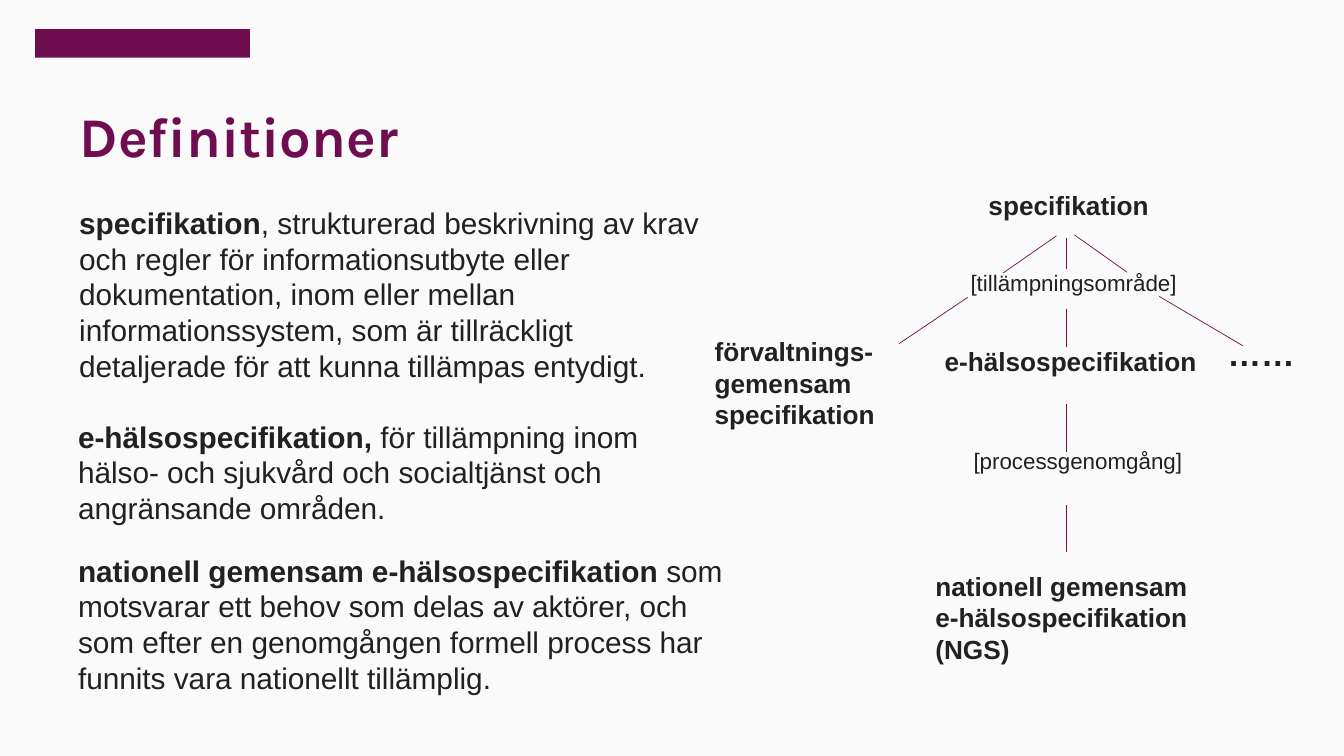
import pptx
import pptx.dml.color
import pptx.enum.shapes
import pptx.enum.text
import pptx.oxml
import pptx.util

Pt = pptx.util.Pt

PLUM = "6E0E50"
INK = "212121"
PAPER = "FAFAFA"

BODY = {"name": "Arial", "size": Pt(21.3)}
TERM = {"name": "Arial", "size": Pt(18.7), "bold": True}
CONDITION = {"name": "Arial", "size": Pt(16)}
ELLIPSIS = {"name": "Arial", "size": Pt(24), "bold": True}
TITLE = {"name": "Karla", "size": Pt(40), "bold": True}

# left, top, width, height, defined term, explanation
DEFINITIONS = [
    (49.5, 142.5, 457, 137, "specifikation",
     ", strukturerad beskrivning av krav och regler för informationsutbyte "
     "eller dokumentation, inom eller mellan informationssystem, som är "
     "tillräckligt detaljerade för att kunna tillämpas entydigt."),
    (48.7, 295.2, 454, 85, "e-hälsospecifikation,",
     " för tillämpning inom hälso- och sjukvård och socialtjänst och "
     "angränsande områden."),
    (48.7, 391, 477, 111, "nationell gemensam e-hälsospecifikation",
     " som motsvarar ett behov som delas av aktörer, och som efter en "
     "genomgången formell process har funnits vara nationellt tillämplig."),
]

# left, top, width, height, text, format
TREE_LABELS = [
    (699, 131.6, 155, 30, "specifikation", TERM),
    (686.2, 188.6, 163.4, 26.6, "[tillämpningsområde]", CONDITION),
    (503.4, 236.2, 129.6, 75, "förvaltnings-\ngemensam\nspecifikation", TERM),
    (667.6, 242.8, 195, 30, "e-hälsospecifikation", TERM),
    (869.8, 234, 63.4, 36, "……", ELLIPSIS),
    (688.3, 316.1, 165.6, 26.6, "[processgenomgång]", CONDITION),
    (661, 403.8, 201, 75,
     "nationell gemensam\ne-hälsospecifikation\n(NGS)", TERM),
]

# start x, start y, end x, end y
SLANTED_BRANCHES = [
    (754.6, 168.5, 716.4, 195.1),
    (767.5, 167.8, 805, 194.4),
    (691.2, 212.4, 642.2, 245.5),
    (828, 211.7, 887.8, 247),
]
TRUNK_X = 761.8
TRUNK_SPANS = [(170, 192.2), (221, 247.7), (288.7, 322.6), (360.7, 394.6)]


def color(hex_value):
    return pptx.dml.color.RGBColor.from_string(hex_value)


def add_span(para, text, values, hex_value=INK):
    """Add text to a paragraph, with a line break at each newline."""
    for index, line in enumerate(text.split("\n")):
        if index:
            para.add_line_break()
        span = para.add_run()
        span.text = line
        for name, value in values.items():
            setattr(span.font, name, value)
        span.font.color.rgb = color(hex_value)


def add_text_box(page, left, top, width, height, wrap=True):
    """Add an empty text box and return its first paragraph."""
    box = page.shapes.add_textbox(Pt(left), Pt(top), Pt(width), Pt(height))
    box.text_frame.word_wrap = wrap
    box.text_frame.auto_size = pptx.enum.text.MSO_AUTO_SIZE.SHAPE_TO_FIT_TEXT
    return box.text_frame, box.text_frame.paragraphs[0]


def add_title(page, text):
    frame, para = add_text_box(page, 56.9, 77.8, 423.4, 44)
    for side in ("left", "top", "right", "bottom"):
        setattr(frame, f"margin_{side}", 0)
    para.line_spacing = 0.9
    add_span(para, text, TITLE, PLUM)


def add_definition(page, left, top, width, height, term, explanation):
    _, para = add_text_box(page, left, top, width, height)
    add_span(para, term, {**BODY, "bold": True})
    add_span(para, explanation, {**BODY, "bold": False})


def add_tree_label(page, left, top, width, height, text, values):
    _, para = add_text_box(page, left, top, width, height, wrap=False)
    add_span(para, text, values)


def add_branch(page, *ends):
    line = page.shapes.add_connector(
        pptx.enum.shapes.MSO_CONNECTOR.STRAIGHT, *map(Pt, ends))
    line.line.color.rgb = color(PLUM)
    line.line.width = Pt(0.5)
    properties = line._element.spPr
    properties.append(pptx.oxml.parse_xml(
        '<a:effectLst xmlns:a='
        '"http://schemas.openxmlformats.org/drawingml/2006/main"/>'))


def add_brand_bar(page):
    bar = page.shapes.add_shape(
        pptx.enum.shapes.MSO_SHAPE.RECTANGLE,
        Pt(25.2), Pt(20.9), Pt(153.4), Pt(20.2))
    bar.shadow.inherit = False
    bar.fill.solid()
    bar.fill.fore_color.rgb = color(PLUM)
    bar.line.fill.background()


def main():
    deck = pptx.Presentation()
    deck.slide_width, deck.slide_height = Pt(960), Pt(540)
    page = deck.slides.add_slide(deck.slide_layouts[6])
    page.background.fill.solid()
    page.background.fill.fore_color.rgb = color(PAPER)

    add_brand_bar(page)
    add_title(page, "Definitioner")
    for definition in DEFINITIONS:
        add_definition(page, *definition)
    for label in TREE_LABELS:
        add_tree_label(page, *label)
    for ends in SLANTED_BRANCHES:
        add_branch(page, *ends)
    for top, bottom in TRUNK_SPANS:
        add_branch(page, TRUNK_X, top, TRUNK_X, bottom)

    deck.save("out.pptx")


if __name__ == "__main__":
    main()
